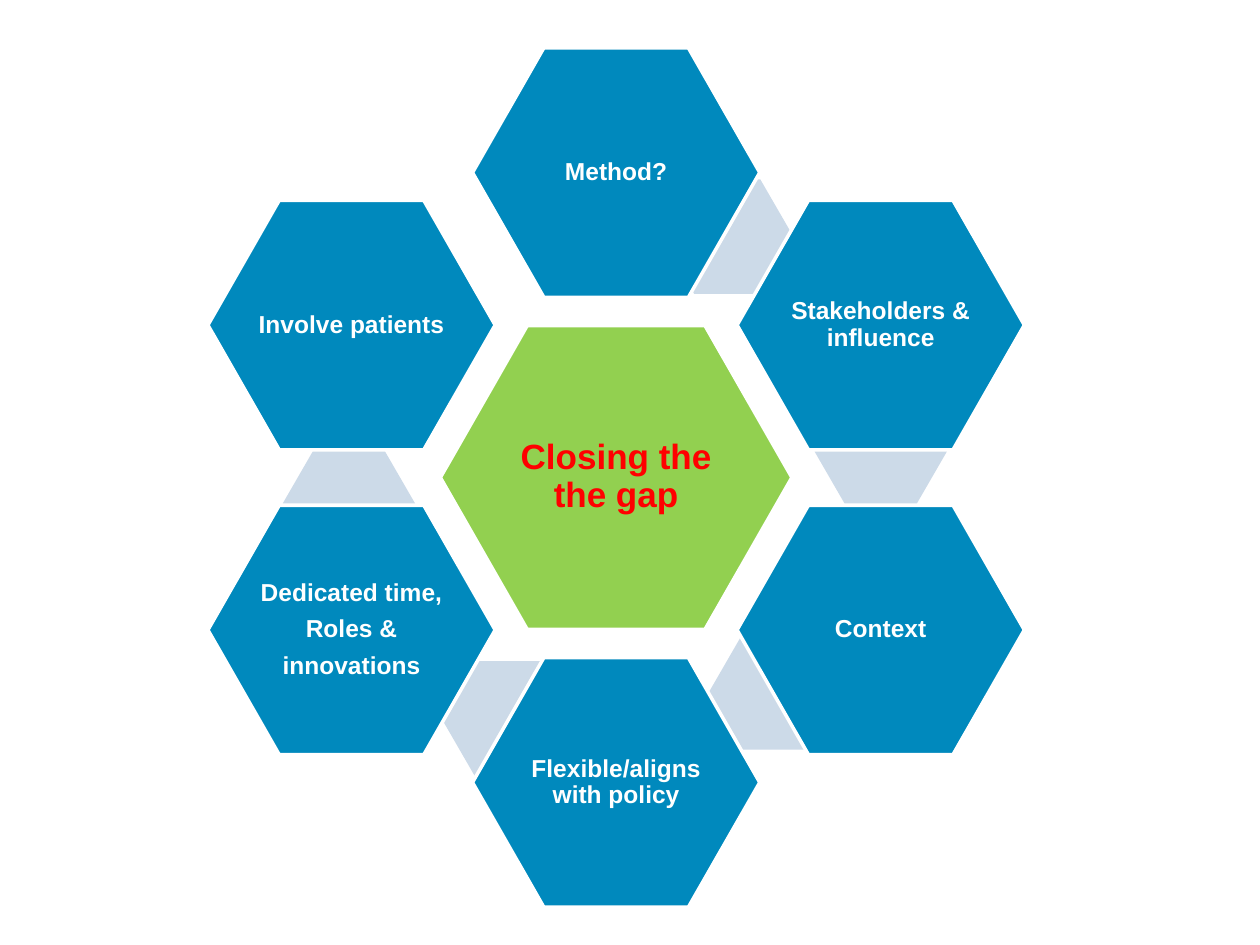
from dataclasses import dataclass

from pptx import Presentation
from pptx.dml.color import RGBColor
from pptx.enum.shapes import MSO_SHAPE
from pptx.enum.text import MSO_ANCHOR, PP_ALIGN
from pptx.util import Inches, Pt


@dataclass(frozen=True)
class Theme:
    font: str = "Arial"
    white: RGBColor = RGBColor.from_string("FFFFFF")
    blue: RGBColor = RGBColor.from_string("0089BD")
    green: RGBColor = RGBColor.from_string("92D050")
    red: RGBColor = RGBColor.from_string("FF0000")
    pale: RGBColor = RGBColor.from_string("CCDAE8")
    hub_size: int = 20
    cell_size: int = 14
    outline: int = 2


THEME = Theme()

# Honeycomb grid: columns and rows are counted from the hub
CENTER_X, CENTER_Y = 4.89, 3.79
COLUMN, ROW = 2.1, 1.21

HUB = (2.79, 2.41)
CELL = (2.28, 1.98)
LINK = (1.05, 0.91)

# Clockwise from the top: column, row, lines of text
CELLS = [
    (0, -2, ["Method?"]),
    (1, -1, ["Stakeholders & influence"]),
    (1, 1, ["Context"]),
    (0, 2, ["Flexible/aligns with policy"]),
    (-1, 1, ["Dedicated time,", "Roles &", "innovations"]),
    (-1, -1, ["Involve patients"]),
]

# Pale hexagons showing between neighbouring cells
LINKS = [(0.42, -1.58), (1, -0.17), (0.6, 1.41), (-0.41, 1.58), (-1.01, 0.17)]


def add_hexagon(shapes, column, row, size, fill, adjustment=0.286):
    """Add a hexagon centred on a grid position."""
    width, height = size
    left = CENTER_X + column * COLUMN - width / 2
    top = CENTER_Y + row * ROW - height / 2
    shape = shapes.add_shape(MSO_SHAPE.HEXAGON, Inches(left), Inches(top),
                             Inches(width), Inches(height))
    shape.adjustments[0] = adjustment
    shape.shadow.inherit = False
    shape.fill.solid()
    shape.fill.fore_color.rgb = fill
    shape.line.fill.background()
    return shape


def add_label(shape, lines, size, color, inset):
    """Outline a hexagon in white and write its centred bold text."""
    shape.line.color.rgb = THEME.white
    shape.line.width = Pt(THEME.outline)
    frame = shape.text_frame
    frame.word_wrap = True
    frame.vertical_anchor = MSO_ANCHOR.MIDDLE
    frame.margin_left = frame.margin_right = Inches(inset)
    frame.margin_top = frame.margin_bottom = Inches(inset)
    frame.text = "\n".join(lines)
    for paragraph in frame.paragraphs:
        paragraph.alignment = PP_ALIGN.CENTER
        paragraph.line_spacing = 0.9
        paragraph.space_after = Pt(size * 0.4)
        font = paragraph.font
        font.name = THEME.font
        font.size = Pt(size)
        font.bold = True
        font.color.rgb = color


def main():
    presentation = Presentation()
    presentation.slide_width = Inches(10)
    presentation.slide_height = Inches(7.5)
    slide = presentation.slides.add_slide(presentation.slide_layouts[6])
    shapes = slide.shapes.add_group_shape().shapes

    # Hub
    hub = add_hexagon(shapes, 0, 0, HUB, THEME.green)
    add_label(hub, ["Closing the the gap"], THEME.hub_size, THEME.red, 0.03)

    # Links lie behind the cells
    for column, row in LINKS:
        add_hexagon(shapes, column, row, LINK, THEME.pale, 0.289)

    # Ring of cells
    for column, row, lines in CELLS:
        cell = add_hexagon(shapes, column, row, CELL, THEME.blue)
        add_label(cell, lines, THEME.cell_size, THEME.white, 0.02)

    presentation.save("out.pptx")


if __name__ == "__main__":
    main()
